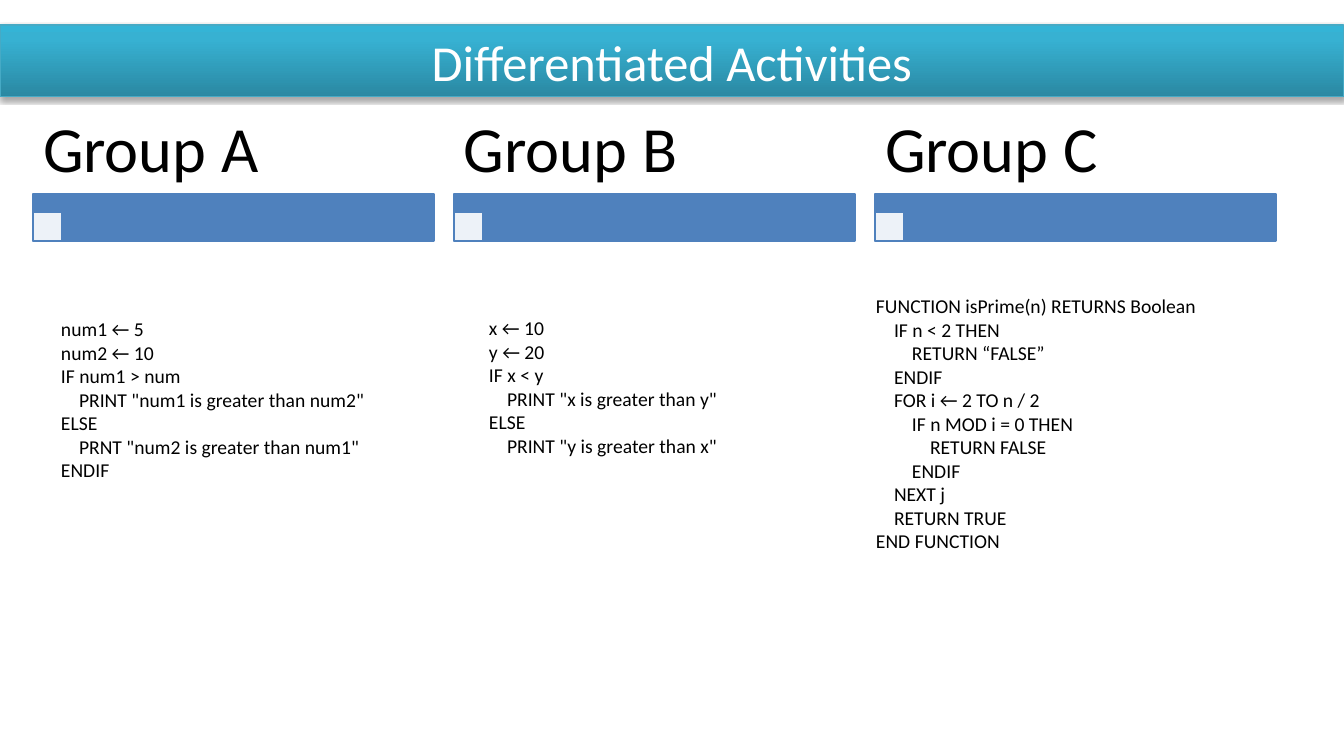
"""Build the Differentiated Activities slide: three groups, each with its pseudocode."""
from dataclasses import dataclass

from lxml.etree import SubElement
from pptx import Presentation
from pptx.dml.color import RGBColor
from pptx.enum.shapes import MSO_SHAPE
from pptx.enum.text import MSO_ANCHOR, MSO_AUTO_SIZE, PP_ALIGN
from pptx.oxml import parse_xml
from pptx.oxml.ns import nsdecls, qn
from pptx.util import Pt

TITLE = "Differentiated Activities"
GROUPS = [
    {"name": "Group A", "code_at": (61, 317), "code": [
        (0, "num1 ← 5"),
        (0, "num2 ← 10"),
        (0, "IF num1 > num"),
        (1, 'PRINT "num1 is greater than num2"'),
        (0, "ELSE"),
        (1, 'PRNT "num2 is greater than num1"'),
        (0, "ENDIF"),
    ]},
    {"name": "Group B", "code_at": (489, 316), "code": [
        (0, "x ← 10"),
        (0, "y ← 20"),
        (0, "IF x < y"),
        (1, 'PRINT "x is greater than y"'),
        (0, "ELSE"),
        (1, 'PRINT "y is greater than x"'),
    ]},
    {"name": "Group C", "code_at": (876, 294), "code": [
        (0, "FUNCTION isPrime(n) RETURNS Boolean"),
        (1, "IF n < 2 THEN"),
        (2, "RETURN “FALSE”"),
        (1, "ENDIF"),
        (1, "FOR i ← 2 TO n / 2"),
        (2, "IF n MOD i = 0 THEN"),
        (3, "RETURN FALSE"),
        (2, "ENDIF"),
        (1, "NEXT j"),
        (1, "RETURN TRUE"),
        (0, "END FUNCTION"),
    ]},
]


@dataclass(frozen=True)
class Theme:
    font: str = "Calibri"
    title_size: int = 36
    name_size: int = 46
    code_size: int = 14
    white: str = "FFFFFF"
    black: str = "000000"
    bar: str = "4F81BD"
    banner_line: str = "46AAC5"
    banner_stops: tuple = ((0, "2A88A2"), (80, "37B1D2"), (100, "34B4D6"))


THEME = Theme()
SLIDE_SIZE = (1344, 756)
BANNER = (0, 25, 1344, 72)
COLUMN_LEFT, COLUMN_WIDTH, COLUMN_STEP = 33, 401, 421
NAME_TOP, NAME_HEIGHT = 109, 85
BAR_TOP, BAR_HEIGHT, MARK_SIZE = 194, 47, 29
CODE_WIDTH, CODE_LINE, CODE_INDENT = 350, 24, 18


def px(length):
    return round(length * 914400 / 100.8)


def assign(target, values):
    for name, value in values.items():
        setattr(target, name, value)


def place(shape, box):
    assign(shape, dict(zip(("left", "top", "width", "height"), map(px, box))))


def write(frame, lines, size, color, margins=(0, 0), **para_format):
    across, down = map(px, margins)
    assign(frame, {"word_wrap": True, "auto_size": MSO_AUTO_SIZE.NONE,
                   "margin_left": across, "margin_right": across,
                   "margin_top": down, "margin_bottom": down})
    for index, (level, text) in enumerate(lines):
        para = frame.add_paragraph() if index else frame.paragraphs[0]
        assign(para, para_format)
        if level:
            para._p.get_or_add_pPr().set("marL", str(px(level * CODE_INDENT)))
        span = para.add_run()
        span.text = text
        assign(span.font, {"name": THEME.font, "size": Pt(size)})
        span.font.color.rgb = RGBColor.from_string(color)


def outline(shape, color, width):
    shape.line.color.rgb = RGBColor.from_string(color)
    shape.line.width = Pt(width)


def add_banner(page):
    banner = page.shapes.title
    place(banner, BANNER)
    outline(banner, THEME.banner_line, 0.75)
    stops = "".join(f'<a:gs pos="{at * 1000}"><a:srgbClr val="{color}"/></a:gs>'
                    for at, color in THEME.banner_stops)
    line = banner.line._get_or_add_ln()
    line.addprevious(parse_xml(
        f'<a:gradFill {nsdecls("a")} rotWithShape="1"><a:gsLst>{stops}</a:gsLst>'
        '<a:lin ang="16200000" scaled="0"/></a:gradFill>'))
    line.addnext(parse_xml(
        f'<a:effectLst {nsdecls("a")}><a:outerShdw blurRad="{Pt(3.1)}" dist="{Pt(1.8)}" '
        f'dir="5400000" rotWithShape="0"><a:srgbClr val="{THEME.black}">'
        '<a:alpha val="35000"/></a:srgbClr></a:outerShdw></a:effectLst>'))
    banner.text_frame.vertical_anchor = MSO_ANCHOR.MIDDLE
    write(banner.text_frame, [(0, TITLE)], THEME.title_size, THEME.white,
          alignment=PP_ALIGN.CENTER)


def add_block(page, box, color, opacity=100):
    block = page.shapes.add_shape(MSO_SHAPE.RECTANGLE, *map(px, box))
    block.shadow.inherit = False
    block.fill.solid()
    block.fill.fore_color.rgb = RGBColor.from_string(color)
    if opacity < 100:
        fill_color = block._element.spPr.find(qn("a:solidFill"))[0]
        SubElement(fill_color, qn("a:alpha")).set("val", str(opacity * 1000))
    outline(block, THEME.bar, 2)


def add_group(page, left, group):
    add_block(page, (left, BAR_TOP, COLUMN_WIDTH, BAR_HEIGHT), THEME.bar)
    mark_top = BAR_TOP + BAR_HEIGHT - MARK_SIZE
    add_block(page, (left, mark_top, MARK_SIZE, MARK_SIZE), THEME.white, 90)

    name_box = page.shapes.add_textbox(
        *map(px, (left, NAME_TOP, COLUMN_WIDTH, NAME_HEIGHT)))
    name_box.text_frame.vertical_anchor = MSO_ANCHOR.MIDDLE
    write(name_box.text_frame, [(0, group["name"])], THEME.name_size, THEME.black,
          margins=(10, 6), line_spacing=0.9)

    code_height = len(group["code"]) * CODE_LINE
    code_box = page.shapes.add_textbox(
        *map(px, (*group["code_at"], CODE_WIDTH, code_height)))
    write(code_box.text_frame, group["code"], THEME.code_size, THEME.black)


def main():
    deck = Presentation()
    assign(deck, dict(zip(("slide_width", "slide_height"), map(px, SLIDE_SIZE))))
    page = deck.slides.add_slide(deck.slide_layouts.get_by_name("Title Only"))
    add_banner(page)
    for column, group in enumerate(GROUPS):
        add_group(page, COLUMN_LEFT + column * COLUMN_STEP, group)
    deck.save("out.pptx")


if __name__ == "__main__":
    main()
